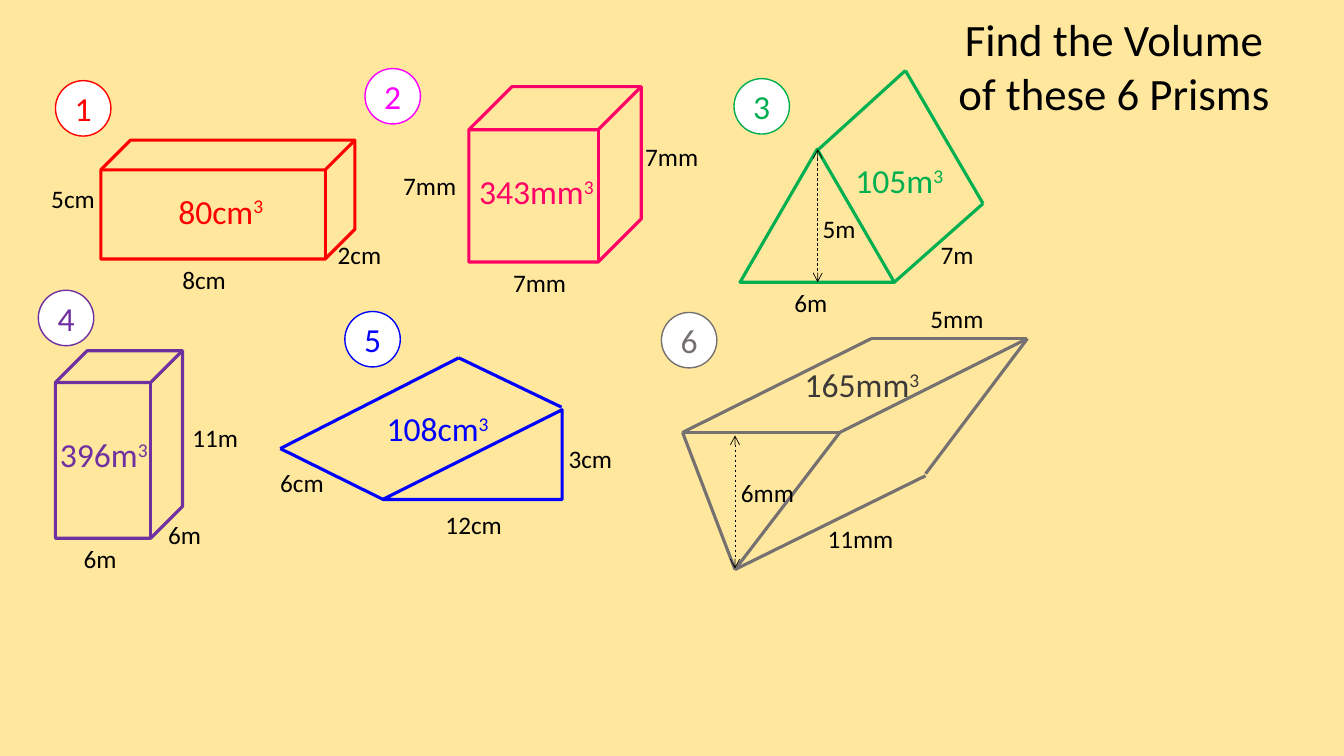
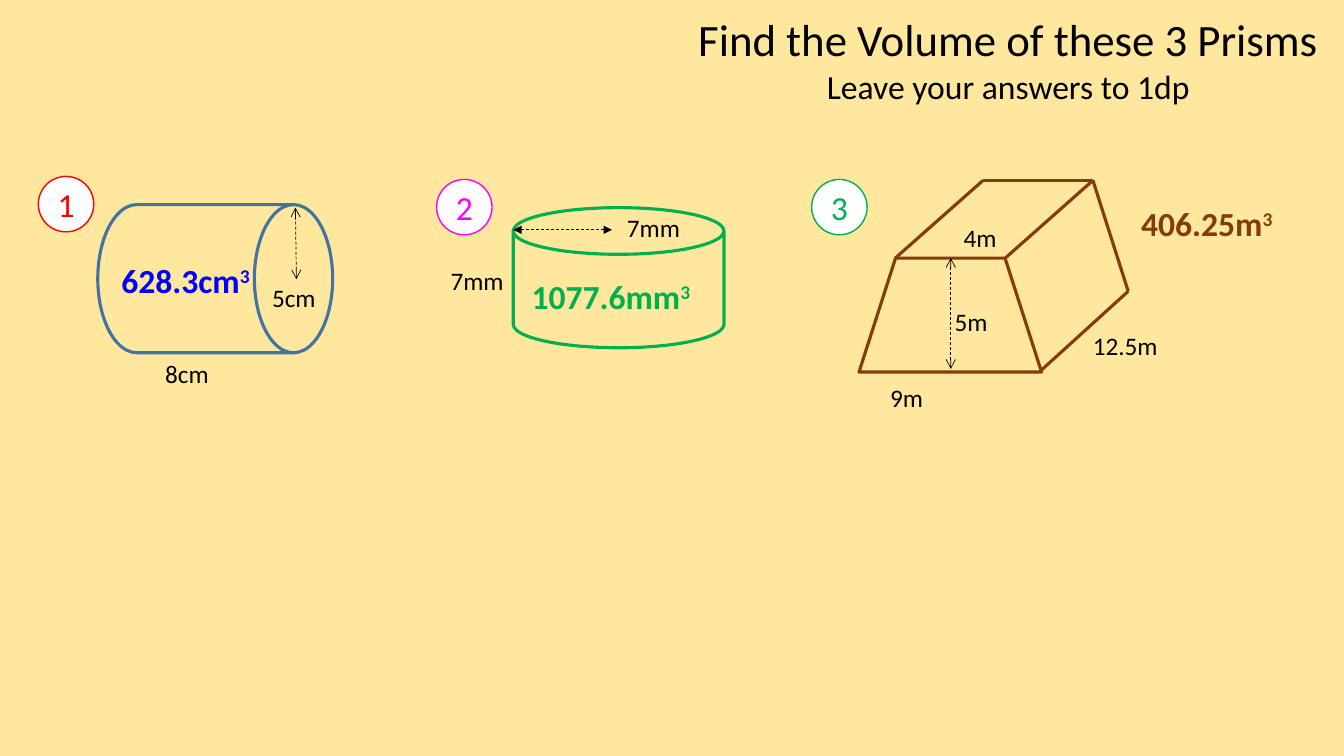
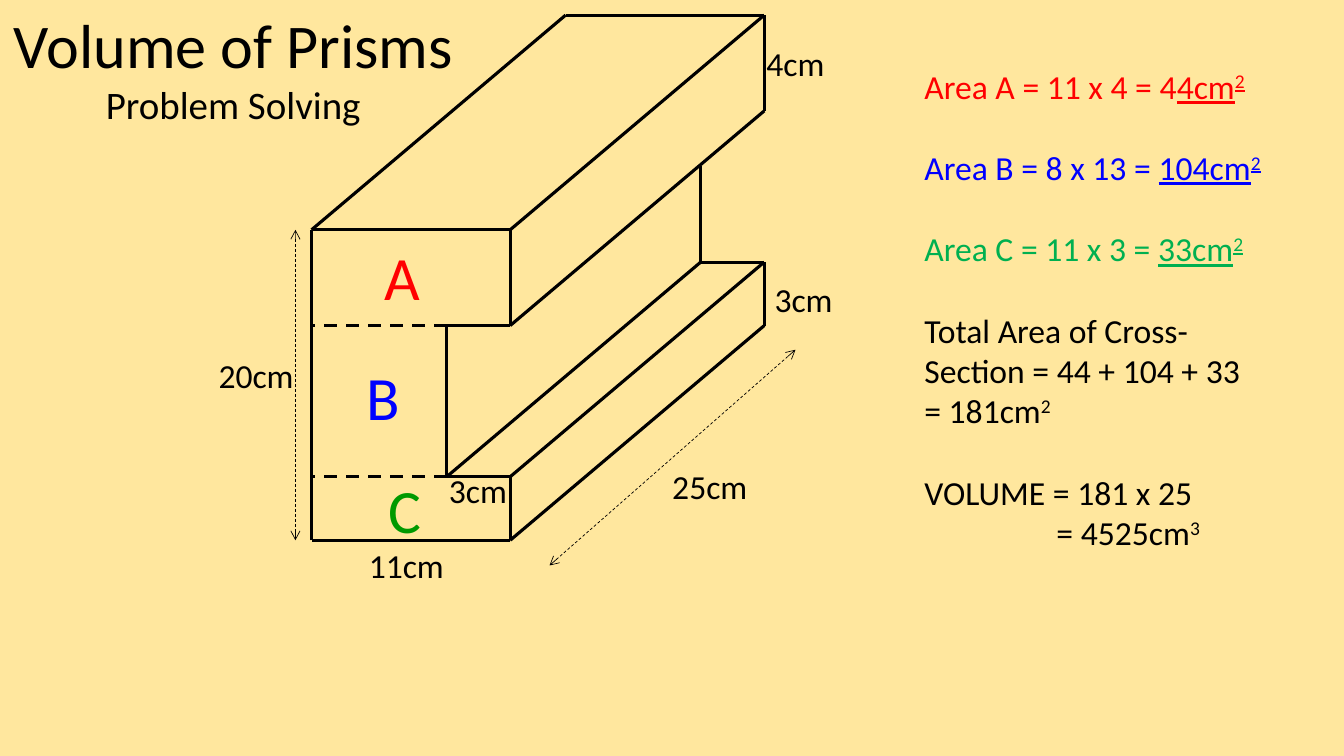
from dataclasses import dataclass

from lxml.etree import SubElement
from pptx import Presentation
from pptx.dml.color import RGBColor
from pptx.enum.dml import MSO_LINE
from pptx.enum.shapes import MSO_CONNECTOR, MSO_SHAPE
from pptx.enum.text import MSO_ANCHOR, MSO_AUTO_SIZE, PP_ALIGN
from pptx.oxml.ns import qn
from pptx.util import Emu, Pt

PX = 9144  # 100 px to the inch


@dataclass(frozen=True)
class Theme:
    font: str = "Calibri"
    background: str = "FFE79E"
    black: str = "000000"
    white: str = "FFFFFF"
    red: str = "FF0000"
    pink: str = "FF0066"
    magenta: str = "FF00FF"
    green: str = "00B050"
    dark_green: str = "009900"
    purple: str = "7030A0"
    blue: str = "0000FF"
    steel: str = "43739E"
    gray: str = "767171"
    charcoal: str = "3B3838"
    brown: str = "843C0B"
    label: float = 18
    body: float = 24
    title: float = 32
    letter: float = 44
    big_title: float = 44.4
    subtitle: float = 27.8
    edge: float = 2.25
    badge_line: float = 1
    measure: float = 0.5


T = Theme()
BADGE, LABEL, ANSWER_WIDTH, ANSWER_HEIGHT = 55, (102, 40), 150, 50

# Content. Shapes: (preset, left, top, width, height, rotation).
# Edges are chains of points, measures are double-headed arrows.
SIX_PRISMS = [
    dict(number=1, badge=(55, 80), tint=T.red, color=T.red,
         shapes=[(MSO_SHAPE.CUBE, 100, 139, 252, 118, 0)],
         labels=[("8cm", 171, 257), ("2cm", 325, 233), ("5cm", 41, 177)],
         answer=("80cm", 144, 184)),
    dict(number=2, badge=(362, 68), tint=T.magenta, color=T.pink,
         shapes=[(MSO_SHAPE.CUBE, 465, 86, 171, 174, 0)],
         labels=[("7mm", 499, 260), ("7mm", 390, 164), ("7mm", 630, 135)],
         answer=("343mm", 457, 165)),
    dict(number=3, badge=(728, 78), tint=T.green, color=T.green,
         shapes=[(MSO_SHAPE.ISOSCELES_TRIANGLE, 734, 148, 153, 132, 0)],
         edges=[[(811, 149), (898, 70), (975, 202), (887, 280)]],
         measures=[((811, 148), (811, 280), "arrow")],
         labels=[("6m", 778, 280), ("7m", 923, 233), ("5m", 806, 207)],
         answer=("105m", 817, 154)),
    dict(number=4, badge=(38, 288), tint=T.purple, color=T.purple,
         shapes=[(MSO_SHAPE.CUBE, 55, 348, 126, 186, 0)],
         labels=[("6m", 73, 534), ("6m", 157, 510), ("11m", 181, 414)],
         answer=("396m", 28, 426)),
    dict(number=5, badge=(342, 309), tint=T.blue, color=T.blue,
         shapes=[(MSO_SHAPE.RIGHT_TRIANGLE, 424, 362, 89, 178, 270)],
         edges=[[(379, 495), (278, 445), (455, 355), (557, 404)]],
         labels=[("12cm", 432, 500), ("3cm", 554, 435), ("6cm", 268, 459)],
         answer=("108cm", 359, 400)),
    dict(number=6, badge=(656, 310), tint=T.gray, color=T.gray,
         edges=[[(729, 565), (677, 429), (833, 429), (729, 565), (918, 472)],
                [(677, 429), (864, 336), (1019, 336), (918, 470)],
                [(833, 429), (1019, 336)]],
         measures=[((729, 432), (729, 564), "arrow")],
         labels=[("11mm", 811, 514), ("5mm", 913, 296), ("6mm", 725, 469)],
         answer=("165mm", 780, 356), answer_color=T.charcoal),
]

THREE_PRISMS = [
    dict(number=1, badge=(38, 175), tint=T.red, color=T.steel,
         shapes=[(MSO_SHAPE.FLOWCHART_DIRECT_ACCESS_STORAGE,
                  97, 203, 233, 147, 0)],
         measures=[((293, 206), (294, 277), "arrow")],
         labels=[("8cm", 154, 351), ("5cm", 260, 275)],
         answer=("628.3cm", 109, 253), answer_color=T.blue),
    dict(number=2, badge=(433, 178), tint=T.magenta, color=T.green,
         shapes=[(MSO_SHAPE.FLOWCHART_MAGNETIC_DISK, 509, 206, 209, 139, 0)],
         measures=[((509, 228), (607, 228), "triangle")],
         labels=[("7mm", 437, 258), ("7mm", 612, 206)],
         answer=("1077.6mm", 498, 269), answer_width=216),
    dict(number=3, badge=(805, 178), tint=T.green, color=T.brown,
         shapes=[(MSO_SHAPE.FLOWCHART_MANUAL_OPERATION,
                  852, 256, 181, 113, 180)],
         edges=[[(888, 256), (975, 179), (1084, 179), (1119, 289),
                 (1032, 368)],
                [(996, 257), (1084, 179)]],
         measures=[((943, 256), (943, 366), "arrow")],
         labels=[("9m", 873, 374), ("4m", 946, 216), ("12.5m", 1074, 323),
                 ("5m", 937, 299)],
         answer=("406.25m", 1110, 196), answer_width=174),
]

# The solid on the last slide: its front face swept back by one vector
DEPTH = (252, -213)
FACE = [(309, 228), (506, 228), (506, 323), (443, 323), (443, 473),
        (506, 473), (506, 536), (309, 536)]
SWEPT_CORNERS = [0, 1, 2, 4, 5, 6]
BACK_EDGES = [[(561, 15), (758, 15), (758, 110)],
              [(695, 165), (695, 260), (758, 260), (758, 323)]]
CUTS = [323, 473]
SOLID_MEASURES = [((293, 228), (293, 536)), ((545, 561), (789, 347))]
SOLID_LABELS = [("11cm", 332, 536), ("3cm", 726, 272), ("4cm", 718, 38),
                ("20cm", 183, 347), ("3cm", 403, 461), ("25cm", 633, 457)]
AREA_LETTERS = [("A", 356, 232, T.red), ("B", 337, 351, T.blue),
                ("C", 358, 463, T.dark_green)]

# Span marks: "^" raised, "_" underlined
GAP = 29.3
SOLUTION = [
    dict(spans=[("Area A = 11 x 4 = 4", ""), ("4cm", "_"), ("2", "_^")],
         color=T.red),
    dict(spans=[("Area B = 8 x 13 = ", ""), ("104cm", "_"), ("2", "_^")],
         color=T.blue, before=GAP),
    dict(spans=[("Area C = 11 x 3 = ", ""), ("33cm", "_"), ("2", "_^")],
         color=T.green, before=GAP),
    dict(spans=[("Total Area of Cross-Section = 44 + 104 + 33", "")],
         before=GAP),
    dict(spans=[("= 181cm", ""), ("2", "^")]),
    dict(spans=[("VOLUME = 181 x 25", "")], before=GAP),
    dict(spans=[("= 4525cm", ""), ("3", "^")], indent=131),
]


def px(*lengths):
    return [Emu(round(length * PX)) for length in lengths]


def rgb(color):
    return RGBColor.from_string(color)


def line(text, size=None):
    return dict(spans=[(text, "")], size=size)


def fill_text(frame, lines, size, color=T.black, align=PP_ALIGN.LEFT,
              bold=False):
    for index, content in enumerate(lines):
        para = frame.paragraphs[0] if index == 0 else frame.add_paragraph()
        para.alignment = align
        if content.get("before"):
            para.space_before = Pt(content["before"])
        if content.get("indent"):
            para._p.get_or_add_pPr().set("marL", str(content["indent"] * PX))
        for text, marks in content["spans"]:
            span = para.add_run()
            span.text = text
            span.font.name = T.font
            span.font.size = Pt(content.get("size") or size)
            span.font.color.rgb = rgb(content.get("color", color))
            span.font.bold = bold
            span.font.underline = "_" in marks
            if "^" in marks:
                span._r.get_or_add_rPr().set("baseline", "30000")


def add_text(shapes, bounds, lines, size, anchor=MSO_ANCHOR.TOP, **style):
    frame = shapes.add_textbox(*px(*bounds)).text_frame
    frame.word_wrap = True
    frame.vertical_anchor = anchor
    if anchor == MSO_ANCHOR.TOP:
        frame.auto_size = MSO_AUTO_SIZE.SHAPE_TO_FIT_TEXT
    fill_text(frame, lines, size, **style)


def add_outline(shapes, preset, bounds, color, width, rotation=0):
    shape = shapes.add_shape(preset, *px(*bounds))
    shape.shadow.inherit = False
    shape.rotation = rotation
    shape.fill.background()
    shape.line.color.rgb = rgb(color)
    shape.line.width = Pt(width)
    return shape


def add_line(shapes, start, end, color=T.black, width=T.edge, dashed=False,
             arrow=None):
    connector = shapes.add_connector(MSO_CONNECTOR.STRAIGHT,
                                     *px(*start, *end))
    connector.line.color.rgb = rgb(color)
    connector.line.width = Pt(width)
    if dashed:
        connector.line.dash_style = MSO_LINE.DASH
    properties = connector._element.spPr
    if arrow:
        outline = properties.find(qn("a:ln"))
        for tag in ("a:headEnd", "a:tailEnd"):
            SubElement(outline, qn(tag)).set("type", arrow)
    SubElement(properties, qn("a:effectLst"))


def add_chain(shapes, points, color=T.black):
    for start, end in zip(points, points[1:]):
        add_line(shapes, start, end, color)


def add_measure(shapes, start, end, arrow="arrow"):
    add_line(shapes, start, end, width=T.measure, dashed=True, arrow=arrow)


def add_badge(shapes, number, position, color):
    badge = add_outline(shapes, MSO_SHAPE.OVAL, (*position, BADGE, BADGE),
                        color, T.badge_line)
    badge.fill.solid()
    badge.fill.fore_color.rgb = rgb(T.white)
    frame = badge.text_frame
    frame.margin_left = frame.margin_right = 0
    frame.margin_top = frame.margin_bottom = 0
    frame.vertical_anchor = MSO_ANCHOR.MIDDLE
    fill_text(frame, [line(str(number))], T.body, color, PP_ALIGN.CENTER)


def add_prism(slide, prism, bold_answer=False):
    shapes = slide.shapes.add_group_shape().shapes
    color = prism["color"]
    for preset, *bounds, rotation in prism.get("shapes", []):
        add_outline(shapes, preset, bounds, color, T.edge, rotation)
    for points in prism.get("edges", []):
        add_chain(shapes, points, color)
    for measure in prism.get("measures", []):
        add_measure(shapes, *measure)
    for text, left, top in prism["labels"]:
        add_text(shapes, (left, top, *LABEL), [line(text)], T.label)
    add_badge(shapes, prism["number"], prism["badge"], prism["tint"])
    amount, left, top = prism["answer"]
    width = prism.get("answer_width", ANSWER_WIDTH)
    add_text(slide.shapes, (left, top, width, ANSWER_HEIGHT),
             [dict(spans=[(amount, ""), ("3", "^")])], T.body,
             color=prism.get("answer_color", color),
             align=PP_ALIGN.CENTER, bold=bold_answer)


def add_slide(deck, title_bounds, title_lines, size=T.title,
              anchor=MSO_ANCHOR.TOP):
    slide = deck.slides.add_slide(deck.slide_layouts[6])
    slide.background.fill.solid()
    slide.background.fill.fore_color.rgb = rgb(T.background)
    add_text(slide.shapes, title_bounds, title_lines, size, anchor,
             align=PP_ALIGN.CENTER)
    return slide


def add_solid(shapes):
    add_chain(shapes, FACE + FACE[:1])
    for x, y in (FACE[corner] for corner in SWEPT_CORNERS):
        add_line(shapes, (x, y), (x + DEPTH[0], y + DEPTH[1]))
    for points in BACK_EDGES:
        add_chain(shapes, points)
    for y in CUTS:
        add_line(shapes, (443, y), (309, y), dashed=True)
    for start, end in SOLID_MEASURES:
        add_measure(shapes, start, end)
    for text, left, top in SOLID_LABELS:
        add_text(shapes, (left, top, 142, 50), [line(text)], T.body,
                 align=PP_ALIGN.CENTER)
    for letter, left, top, color in AREA_LETTERS:
        add_text(shapes, (left, top, 87, 84), [line(letter)], T.letter,
                 color=color, align=PP_ALIGN.CENTER)


def main():
    deck = Presentation()
    deck.slide_width, deck.slide_height = px(1333, 750)

    # Six prisms
    slide = add_slide(deck, (881, 7, 448, 118),
                      [line("Find the Volume"), line("of these 6 Prisms")])
    for prism in SIX_PRISMS:
        add_prism(slide, prism)

    # Three prisms, rounded answers
    slide = add_slide(deck, (670, 7, 660, 104),
                      [line("Find the Volume of these 3 Prisms"),
                       line("Leave your answers to 1dp", T.body)])
    for prism in THREE_PRISMS:
        add_prism(slide, prism, bold_answer=True)

    # Problem solving
    slide = add_slide(deck, (1, 4, 461, 125),
                      [line("Volume of Prisms"),
                       line("Problem Solving", T.subtitle)],
                      T.big_title, MSO_ANCHOR.MIDDLE)
    add_solid(slide.shapes)
    add_text(slide.shapes, (907, 60, 358, 495), SOLUTION, T.body)

    deck.save("out.pptx")


if __name__ == "__main__":
    main()
